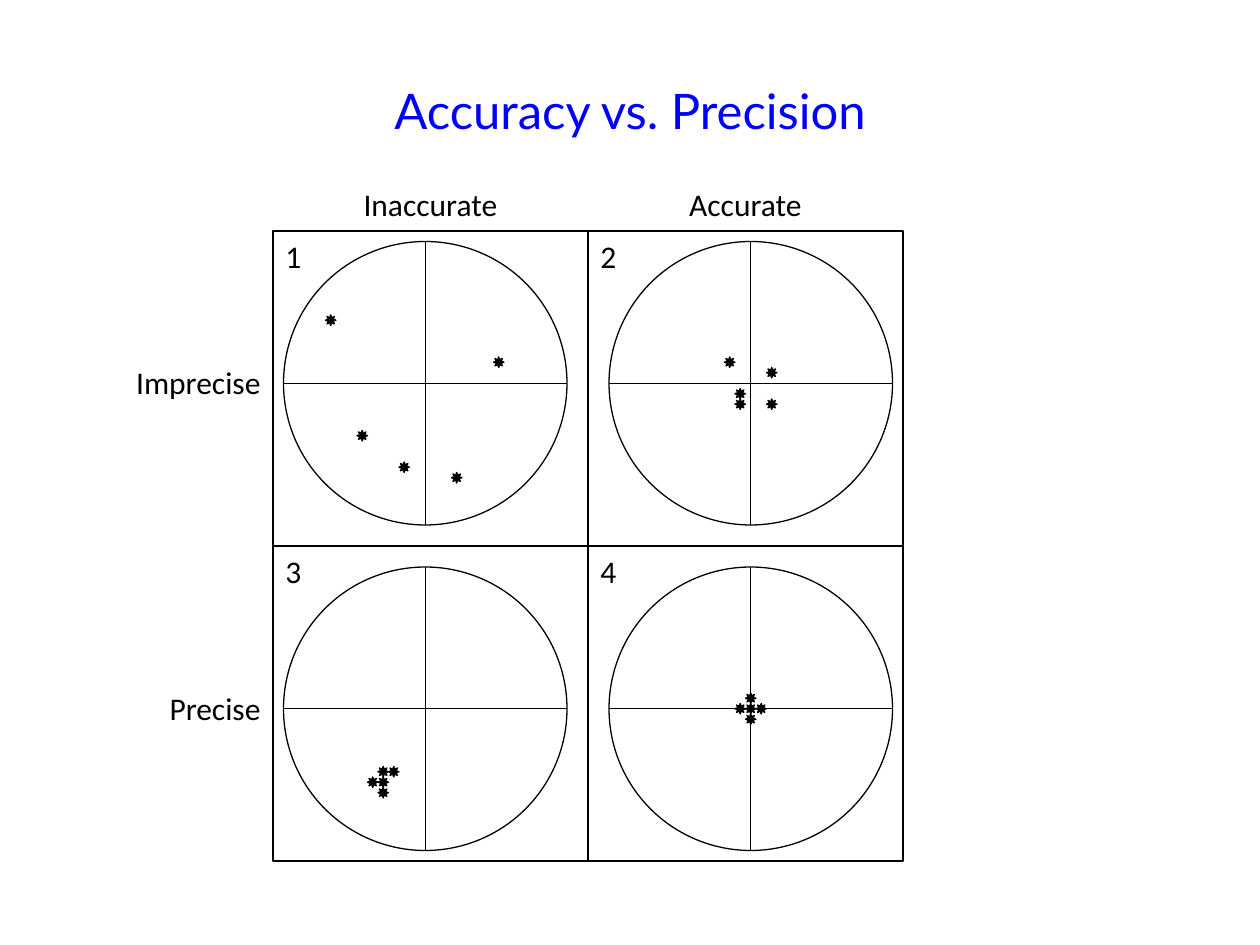
from dataclasses import dataclass

from lxml.etree import SubElement
from pptx import Presentation
from pptx.dml.color import RGBColor
from pptx.enum.shapes import MSO_CONNECTOR, MSO_SHAPE
from pptx.enum.text import MSO_ANCHOR, MSO_AUTO_SIZE, PP_ALIGN
from pptx.oxml.ns import qn
from pptx.shapes.autoshape import Shape
from pptx.slide import Slide
from pptx.util import Inches, Length, Pt

COLORS = {"ink": "000000", "title": "0000FF", "paper": "FFFFFF"}

# Grid measures, in units of a twelfth of an inch
LEFT, TOP, CELL = 26, 22, 30
ROUND, PITCH = 27, 31


@dataclass
class Target:
    num: str
    col: int
    row: int
    width: float  # width of the number box, in inches
    hits: list[tuple[int, int]]  # units from the target's top left


@dataclass
class Label:
    text: str
    x: int
    y: int
    align: PP_ALIGN


TARGETS = [
    Target("1", 0, 0, 0.25, [(4, 7), (7, 18), (16, 22), (11, 21), (20, 11)]),
    Target("2", 1, 0, 0.42, [(11, 11), (12, 14), (15, 12), (15, 15), (12, 15)]),
    Target("3", 0, 1, 0.33, [(9, 19), (10, 19), (9, 20), (8, 20), (9, 21)]),
    Target("4", 1, 1, 0.33, [(12, 13), (13, 13), (13, 14), (13, 12), (14, 13)]),
]
LABELS = [
    Label("Imprecise", 8, 34, PP_ALIGN.RIGHT),
    Label("Precise", 8, 34 + PITCH, PP_ALIGN.RIGHT),
    Label("Inaccurate", 32, 17, PP_ALIGN.CENTER),
    Label("Accurate", 32 + CELL, 17, PP_ALIGN.CENTER),
]


def unit(n: float) -> Length:
    return Inches(n / 12)


def color(name: str) -> RGBColor:
    return RGBColor.from_string(COLORS[name])


def add_shape(slide: Slide, kind: MSO_SHAPE, x: int, y: int, size: int,
              solid: bool = False) -> Shape:
    shape = slide.shapes.add_shape(kind, unit(x), unit(y), unit(size), unit(size))
    shape.shadow.inherit = False
    shape.line.color.rgb = color("ink")
    shape.line.width = Pt(0.75)
    if solid:
        shape.fill.solid()
        shape.fill.fore_color.rgb = color("ink")
    else:
        shape.fill.background()
    return shape


def add_text(slide: Slide, text: str, x: int, y: int, width: float,
             align: PP_ALIGN) -> None:
    box = slide.shapes.add_textbox(unit(x), unit(y), Inches(width), Inches(0.4))
    frame = box.text_frame
    frame.word_wrap = True
    frame.auto_size = MSO_AUTO_SIZE.SHAPE_TO_FIT_TEXT
    para = frame.paragraphs[0]
    para.text = text
    para.alignment = align
    para.font.name = "Calibri"
    para.font.size = Pt(18)
    para.font.color.rgb = color("ink")


def add_rule(slide: Slide, frame: Shape, start: int, end: int) -> None:
    rule = slide.shapes.add_connector(MSO_CONNECTOR.STRAIGHT, 0, 0, 0, 0)
    rule.begin_connect(frame, start)
    rule.end_connect(frame, end)
    rule.line.color.rgb = color("ink")
    rule.line.width = Pt(0.75)
    SubElement(rule.element.spPr, qn("a:effectLst"))


def add_title(slide: Slide) -> None:
    title = slide.shapes.title
    title.left, title.top = Inches(0.75), Inches(0.25)
    title.width, title.height = Inches(8.5), Inches(1.25)
    title.fill.solid()
    title.fill.fore_color.rgb = color("paper")
    title.text_frame.vertical_anchor = MSO_ANCHOR.MIDDLE
    para = title.text_frame.paragraphs[0]
    para.text = "Accuracy vs. Precision"
    para.alignment = PP_ALIGN.CENTER
    para.font.name = "Lato"
    para.font.size = Pt(28)
    para.font.color.rgb = color("title")


def add_target(slide: Slide, target: Target) -> None:
    x = LEFT + 1 + target.col * PITCH
    y = TOP + 1 + target.row * PITCH
    add_shape(slide, MSO_SHAPE.FLOWCHART_OR, x, y, ROUND)
    for dx, dy in target.hits:
        add_shape(slide, MSO_SHAPE.SUN, x + dx, y + dy, 1, solid=True)


def main() -> None:
    deck = Presentation()
    deck.slide_width, deck.slide_height = Inches(10), Inches(7.5)
    slide = deck.slides.add_slide(deck.slide_layouts[5])
    add_title(slide)

    # Targets with their hits
    for target in TARGETS:
        add_target(slide, target)

    # Row and column labels
    for label in LABELS:
        add_text(slide, label.text, label.x, label.y, 1.5, label.align)

    # Frame and its dividing lines
    frame = add_shape(slide, MSO_SHAPE.RECTANGLE, LEFT, TOP, 2 * CELL)
    add_rule(slide, frame, 1, 3)
    add_rule(slide, frame, 2, 0)

    # Cell numbers
    for target in TARGETS:
        add_text(slide, target.num, LEFT + target.col * CELL,
                 TOP + target.row * CELL, target.width, PP_ALIGN.LEFT)

    deck.save("out.pptx")


if __name__ == "__main__":
    main()
